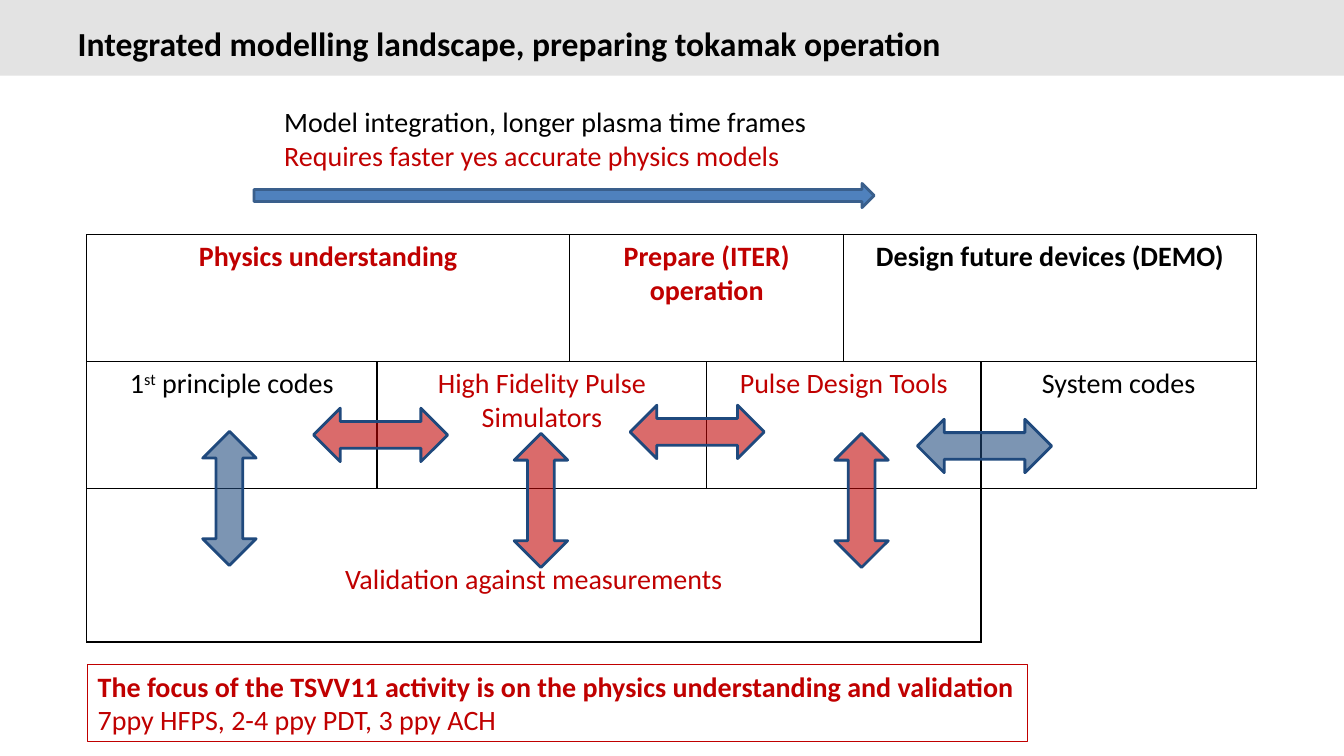
from dataclasses import dataclass

import pptx
import pptx.util
import pptx.dml.color
import pptx.enum.shapes
import pptx.enum.text
import pptx.oxml
import pptx.oxml.ns

Inches = pptx.util.Inches
Pt = pptx.util.Pt
Shape = pptx.enum.shapes.MSO_SHAPE
Align = pptx.enum.text.PP_ALIGN
qn = pptx.oxml.ns.qn

COLORS = {"band": "E3E3E3", "black": "000000", "red": "C00000", "navy": "1F497D",
          "blue": "4F81BD", "blue edge": "3A5F8C"}
FONT = "Calibri"
COLUMNS = [2.88, 1.91, 1.36, 1.36, 1.36, 2.73]
ROWS = [1.26, 1.26, 1.52]
ARROW_SIZE = (1.33, 0.53)


@dataclass
class Line:
    """One paragraph; superscript marks its raised run, if any."""
    texts: list[str]
    color: str
    bold: bool = False
    superscript: int = -1


@dataclass
class Cell:
    row: int
    first: int
    last: int
    line: Line


@dataclass
class Arrow:
    left: float
    top: float
    color: str
    vertical: bool = False


CELLS = [
    Cell(0, 0, 1, Line(["Physics understanding"], "red", True)),
    Cell(0, 2, 3, Line(["Prepare (ITER) operation"], "red", True)),
    Cell(0, 4, 5, Line(["Design future devices (DEMO)"], "black", True)),
    Cell(1, 0, 0, Line(["1", "st", " principle codes"], "black", superscript=1)),
    Cell(1, 1, 2, Line(["High Fidelity Pulse Simulators"], "red")),
    Cell(1, 3, 4, Line(["Pulse Design Tools"], "red")),
    Cell(1, 5, 5, Line(["System codes"], "black")),
    Cell(2, 0, 4, Line(["Validation against measurements"], "red")),
]
ARROWS = [
    Arrow(3.11, 4.05, "red"),
    Arrow(6.25, 4.02, "red"),
    Arrow(9.1, 4.16, "navy"),
    Arrow(1.61, 4.68, "navy", vertical=True),
    Arrow(4.7, 4.7, "red", vertical=True),
    Arrow(7.88, 4.7, "red", vertical=True),
]
AIM = [Line(["Model integration, longer plasma time frames"], "black"),
       Line(["Requires faster yes accurate physics models"], "red")]
FOCUS = [Line(["The focus of the TSVV11 activity is on the physics understanding and validation"],
              "red", True),
         Line(["7ppy HFPS, 2-4 ppy PDT, 3 ppy ACH"], "red")]


def rgb(name: str) -> pptx.dml.color.RGBColor:
    return pptx.dml.color.RGBColor.from_string(COLORS[name])


def write_line(p, line: Line, size: float = 20) -> None:
    for i, text in enumerate(line.texts):
        r = p.add_run()
        r.text = text
        r.font.name = FONT
        r.font.size = Pt(size)
        r.font.bold = line.bold
        r.font.color.rgb = rgb(line.color)
        if i == line.superscript:
            r.font._element.set("baseline", "30000")


def add_solid(slide, kind, box: tuple, fill: str, edge: str | None = None):
    sp = slide.shapes.add_shape(kind, *map(Inches, box))
    sp.shadow.inherit = False
    sp.fill.solid()
    sp.fill.fore_color.rgb = rgb(fill)
    if edge:
        sp.line.color.rgb = rgb(edge)
        sp.line.width = Pt(2)
    else:
        sp.line.fill.background()
    return sp


def add_title(slide) -> None:
    band = add_solid(slide, Shape.RECTANGLE, (0, 0, 13.33, 0.75), "band")
    slide.shapes._spTree.insert(2, band._element)
    title = slide.shapes.title
    title.left, title.top, title.width, title.height = map(Inches, (0.67, 0.08, 11, 0.5))
    tf = title.text_frame
    tf.auto_size = pptx.enum.text.MSO_AUTO_SIZE.NONE
    tf.vertical_anchor = pptx.enum.text.MSO_ANCHOR.MIDDLE
    p = tf.paragraphs[0]
    p.alignment = Align.LEFT
    p.line_spacing = Pt(42.7)
    write_line(p, Line(["Integrated modelling landscape, preparing tokamak operation"],
                       "black", True), 24)


def add_text(slide, box: tuple, lines: list[Line]):
    sp = slide.shapes.add_textbox(*map(Inches, box))
    tf = sp.text_frame
    tf.word_wrap = False
    tf.auto_size = pptx.enum.text.MSO_AUTO_SIZE.SHAPE_TO_FIT_TEXT
    for i, line in enumerate(lines):
        write_line(tf.add_paragraph() if i else tf.paragraphs[0], line)
    return sp


def set_borders(cell, sides: str) -> None:
    """Draw the sides named by letter (L, R, T, B) and hide the others."""
    tcPr = cell._tc.get_or_add_tcPr()
    for side in "LRTB":
        ln = pptx.oxml.parse_xml(
            f'<a:ln{side} xmlns:a="http://schemas.openxmlformats.org/drawingml/2006/main" w="12700"/>')
        if side in sides:
            fill = ln.makeelement(qn("a:solidFill"))
            fill.append(fill.makeelement(qn("a:srgbClr"), {"val": COLORS["black"]}))
        else:
            fill = ln.makeelement(qn("a:noFill"))
        ln.append(fill)
        tcPr.append(ln)
    cell.fill.background()


def add_landscape(slide) -> None:
    frame = slide.shapes.add_table(len(ROWS), len(COLUMNS), Inches(0.86), Inches(2.33),
                                   Inches(sum(COLUMNS)), Inches(sum(ROWS)))
    table = frame.table
    table.first_row = table.horz_banding = False
    for column, width in zip(table.columns, COLUMNS):
        column.width = Inches(width)
    for row, height in zip(table.rows, ROWS):
        row.height = Inches(height)
    outside = len(ROWS) * len(COLUMNS) - 1
    for i, cell in enumerate(table.iter_cells()):
        set_borders(cell, "LT" if i == outside else "LRTB")
    for item in CELLS:
        cell = table.cell(item.row, item.first)
        if item.last > item.first:
            cell.merge(table.cell(item.row, item.last))
        p = cell.text_frame.paragraphs[0]
        p.alignment = Align.CENTER
        write_line(p, item.line)
    table.cell(2, 0).margin_top = Inches(0.73)


def add_arrow(slide, arrow: Arrow) -> None:
    sp = add_solid(slide, Shape.LEFT_RIGHT_ARROW, (arrow.left, arrow.top, *ARROW_SIZE),
                   arrow.color, "navy")
    sp.rotation = 90 if arrow.vertical else 0
    color = sp._element.spPr.find(qn("a:solidFill")).find(qn("a:srgbClr"))
    color.append(color.makeelement(qn("a:alpha"), {"val": "58000"}))


def main() -> None:
    prs = pptx.Presentation()
    prs.slide_width, prs.slide_height = Inches(13.33), Inches(7.5)
    slide = prs.slides.add_slide(prs.slide_layouts[5])
    add_title(slide)
    add_landscape(slide)
    add_text(slide, (2.72, 0.99, 5.44, 0.77), AIM)
    add_solid(slide, Shape.RIGHT_ARROW, (2.52, 1.82, 6.15, 0.24), "blue", "blue edge")
    for arrow in ARROWS:
        add_arrow(slide, arrow)
    focus = add_text(slide, (0.87, 6.59, 9.32, 0.77), FOCUS)
    focus.line.color.rgb = rgb("red")
    focus.line.width = Pt(0.75)
    prs.save("out.pptx")


if __name__ == "__main__":
    main()
